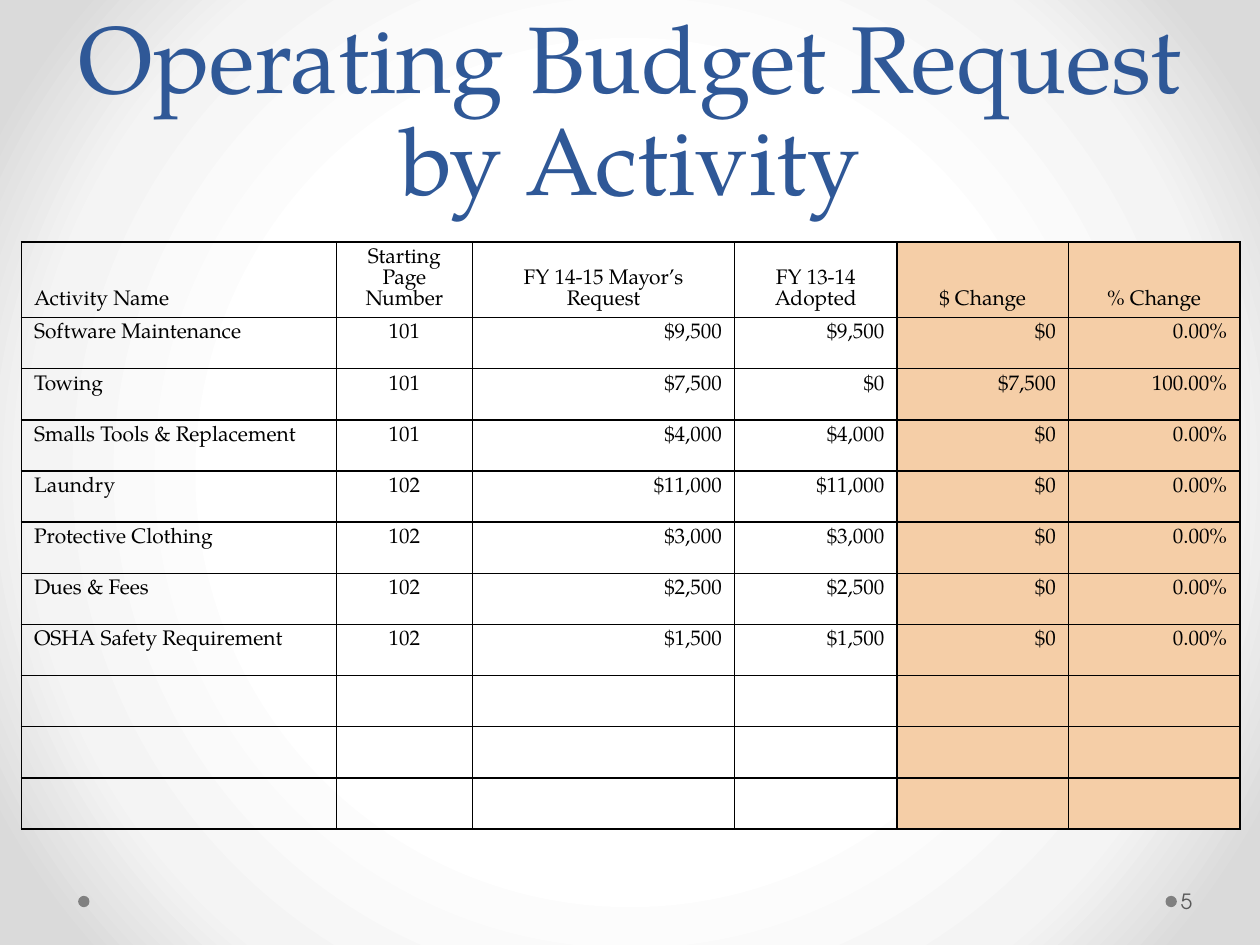
from pptx import Presentation
from pptx.dml.color import RGBColor
from pptx.enum.shapes import MSO_SHAPE
from pptx.enum.text import MSO_ANCHOR, PP_ALIGN
from pptx.oxml import parse_xml
from pptx.oxml.ns import nsdecls
from pptx.util import Inches, Pt

LEFT, CENTER, RIGHT = PP_ALIGN.LEFT, PP_ALIGN.CENTER, PP_ALIGN.RIGHT
TOP, MIDDLE, BOTTOM = MSO_ANCHOR.TOP, MSO_ANCHOR.MIDDLE, MSO_ANCHOR.BOTTOM
OVAL = MSO_SHAPE.OVAL

BLUE = RGBColor(0x2F, 0x58, 0x97)
BLACK = RGBColor(0x00, 0x00, 0x00)
PEACH = RGBColor(0xF5, 0xCE, 0xA7)
DOT_GRAY = RGBColor(0x80, 0x80, 0x80)
NUMBER_GRAY = RGBColor(0x59, 0x59, 0x59)
BACKGROUND_STOPS = [
    (50, RGBColor(0xFF, 0xFF, 0xFF)),
    (76, RGBColor(0xF4, 0xF4, 0xF4)),
    (92, RGBColor(0xDA, 0xDA, 0xDA)),
]

SERIF = "TeX Gyre Pagella"
SANS = "TeX Gyre Adventor"
TITLE_FONT = {"name": SERIF, "size": Pt(54), "bold": False}
CELL_FONT = {"name": SERIF, "size": Pt(12), "bold": False}
NUMBER_FONT = {"name": SANS, "size": Pt(12), "bold": False}

COLUMN_WIDTHS = [2.5, 1.08, 2.08, 1.29, 1.36, 1.36]
COLUMN_ALIGNMENTS = [LEFT, CENTER, RIGHT, RIGHT, RIGHT, RIGHT]
FIRST_CHANGE_COLUMN = 4
HEADER_HEIGHT = 0.6
BODY_HEIGHT = 4.06
EMPTY_ROWS = 3
HEADERS = ["Activity Name", "Starting Page Number", "FY 14-15 Mayor’s Request",
           "FY 13-14 Adopted", "$ Change", "% Change"]
ACTIVITIES = [
    ["Software Maintenance", "101", "$9,500", "$9,500", "$0", "0.00%"],
    ["Towing", "101", "$7,500", "$0", "$7,500", "100.00%"],
    ["Smalls Tools & Replacement", "101", "$4,000", "$4,000", "$0", "0.00%"],
    ["Laundry", "102", "$11,000", "$11,000", "$0", "0.00%"],
    ["Protective Clothing", "102", "$3,000", "$3,000", "$0", "0.00%"],
    ["Dues & Fees", "102", "$2,500", "$2,500", "$0", "0.00%"],
    ["OSHA Safety Requirement", "102", "$1,500", "$1,500", "$0", "0.00%"],
]


def set_background(slide):
    """Fill the slide with a gradient that spreads from its centre."""
    stops = "".join(
        f'<a:gs pos="{position * 1000}"><a:srgbClr val="{color}"/></a:gs>'
        for position, color in BACKGROUND_STOPS)
    background = parse_xml(
        f'<p:bg {nsdecls("p", "a")}><p:bgPr><a:gradFill rotWithShape="1">'
        f'<a:gsLst>{stops}</a:gsLst><a:path path="circle">'
        '<a:fillToRect l="50000" t="50000" r="50000" b="50000"/></a:path>'
        '</a:gradFill><a:effectLst/></p:bgPr></p:bg>')
    slide.element.cSld.insert(0, background)


def write_text(frame, text, font_format, color, alignment, spacing=None):
    paragraph = frame.paragraphs[0]
    paragraph.alignment = alignment
    paragraph.line_spacing = spacing
    run = paragraph.add_run()
    run.text = text
    for name, value in font_format.items():
        setattr(run.font, name, value)
    run.font.color.rgb = color


def add_text_box(slide, left, top, width, height, frame_format):
    box = slide.shapes.add_textbox(
        Inches(left), Inches(top), Inches(width), Inches(height))
    frame = box.text_frame
    frame.word_wrap = True
    for name, value in frame_format.items():
        setattr(frame, name, value)
    return frame


def add_dot(slide, left):
    dot = slide.shapes.add_shape(
        OVAL, Inches(left), Inches(7.11), Inches(0.09), Inches(0.09))
    dot.shadow.inherit = False
    dot.fill.solid()
    dot.fill.fore_color.rgb = DOT_GRAY
    dot.line.fill.background()


def format_cell(cell, is_change):
    properties = cell._tc.get_or_add_tcPr()
    for side in ("lnL", "lnR", "lnT", "lnB"):
        properties.append(parse_xml(
            f'<a:{side} {nsdecls("a")} w="{Pt(1)}"><a:solidFill>'
            f'<a:srgbClr val="{BLACK}"/></a:solidFill></a:{side}>'))
    if is_change:
        cell.fill.solid()
        cell.fill.fore_color.rgb = PEACH
    else:
        cell.fill.background()


def add_budget_table(slide):
    body_rows = len(ACTIVITIES) + EMPTY_ROWS
    table = slide.shapes.add_table(
        body_rows + 1, len(HEADERS), Inches(0.17), Inches(1.92),
        Inches(sum(COLUMN_WIDTHS)), Inches(HEADER_HEIGHT + BODY_HEIGHT)).table
    table.first_row = table.horz_banding = False
    for column, width in zip(table.columns, COLUMN_WIDTHS):
        column.width = Inches(width)

    rows = [HEADERS] + ACTIVITIES + [[""] * len(HEADERS)] * EMPTY_ROWS
    for r, texts in enumerate(rows):
        is_header = r == 0
        table.rows[r].height = Inches(
            HEADER_HEIGHT if is_header else BODY_HEIGHT / body_rows)
        for c, text in enumerate(texts):
            cell = table.cell(r, c)
            format_cell(cell, c >= FIRST_CHANGE_COLUMN)
            cell.vertical_anchor = BOTTOM if is_header else TOP
            alignment = CENTER if is_header and c > 0 else COLUMN_ALIGNMENTS[c]
            if text:
                write_text(cell.text_frame, text, CELL_FONT, BLACK,
                           alignment, Pt(12))


def main():
    presentation = Presentation()
    presentation.slide_width = Inches(10)
    presentation.slide_height = Inches(7.5)
    slide = presentation.slides.add_slide(presentation.slide_layouts[6])
    set_background(slide)

    # Footer dots
    for left in (9.25, 0.62):
        add_dot(slide, left)

    # Title
    title = add_text_box(slide, 0.5, 0, 9, 1.75, {"vertical_anchor": BOTTOM})
    write_text(title, "Operating Budget Request by Activity", TITLE_FONT,
               BLUE, CENTER, Pt(58))

    # Budget by activity
    add_budget_table(slide)

    # Page number
    page_number = add_text_box(slide, 9.34, 6.95, 0.61, 0.4, {
        "vertical_anchor": MIDDLE,
        "margin_left": Inches(0.03),
        "margin_right": Inches(0.05),
    })
    write_text(page_number, "5", NUMBER_FONT, NUMBER_GRAY, LEFT)

    presentation.save("out.pptx")


if __name__ == "__main__":
    main()
